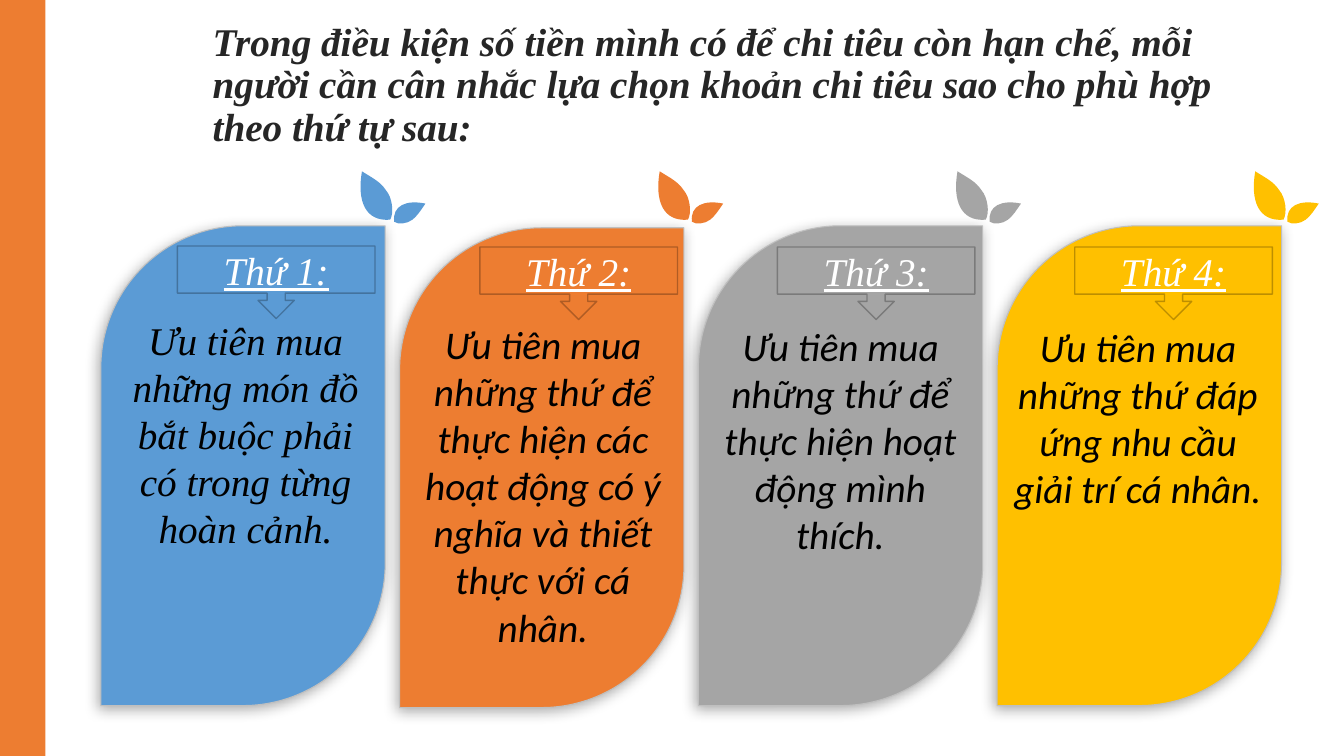
import lxml.etree
import pptx
import pptx.dml.color
import pptx.enum.shapes
import pptx.enum.text
import pptx.oxml
import pptx.oxml.ns
import pptx.util

Inches, Pt = pptx.util.Inches, pptx.util.Pt
RGBColor = pptx.dml.color.RGBColor
MSO_SHAPE = pptx.enum.shapes.MSO_SHAPE
MSO_ANCHOR = pptx.enum.text.MSO_ANCHOR
MSO_AUTO_SIZE = pptx.enum.text.MSO_AUTO_SIZE
PP_ALIGN = pptx.enum.text.PP_ALIGN
qn = pptx.oxml.ns.qn

BLUE = RGBColor(0x5B, 0x9B, 0xD5)
ORANGE = RGBColor(0xED, 0x7D, 0x31)
GRAY = RGBColor(0xA5, 0xA5, 0xA5)
GOLD = RGBColor(0xFF, 0xC0, 0x00)
BLUE_EDGE = RGBColor(0x43, 0x73, 0x9E)
ORANGE_EDGE = RGBColor(0xAF, 0x5C, 0x24)
GRAY_EDGE = RGBColor(0x7A, 0x7A, 0x7A)
GOLD_EDGE = RGBColor(0xBD, 0x8E, 0x00)
PANEL_EDGE = RGBColor(0xBF, 0xBF, 0xBF)
INK = RGBColor(0x26, 0x26, 0x26)
BLACK = RGBColor(0, 0, 0)
WHITE = RGBColor(0xFF, 0xFF, 0xFF)

SERIF, SANS = "Times New Roman", "Calibri"

HEADING = ("Trong điều kiện số tiền mình có để chi tiêu còn hạn chế, mỗi người cần "
           "cân nhắc lựa chọn khoản chi tiêu sao cho phù hợp theo thứ tự sau:")

# fill, edge, panel top, label (left, top), advice (left, top, height), font, advice
PRIORITIES = [
    (BLUE, BLUE_EDGE, 2.24, (1.76, 2.44), (1.1, 3.09, 2.46), SERIF,
     "Ưu tiên mua những món đồ bắt buộc phải có trong từng hoàn cảnh."),
    (ORANGE, ORANGE_EDGE, 2.26, (4.76, 2.45), (4.05, 3.13, 3.4), SANS,
     "Ưu tiên mua những thứ để thực hiện các hoạt động có ý nghĩa và thiết thực "
     "với cá nhân."),
    (GRAY, GRAY_EDGE, 2.24, (7.71, 2.45), (7, 3.15, 2.46), SANS,
     "Ưu tiên mua những thứ để thực hiện hoạt động mình thích."),
    (GOLD, GOLD_EDGE, 2.24, (10.66, 2.45), (9.95, 3.16, 1.99), SANS,
     "Ưu tiên mua những thứ đáp ứng nhu cầu giải trí cá nhân."),
]
PANEL_LEFT, PANEL_STEP = 1, (9.89 - 1) / 3
LEAF_STEP = (12.45 - 3.59) / 3

# Each leaf: start point, then two controls and an end for every cubic curve
LEAVES = [
    [(3.87, 2.18),
     (3.91, 2.11), (3.89, 1.96), (3.83, 1.89),
     (3.77, 1.8), (3.7, 1.77), (3.59, 1.7),
     (3.54, 1.99), (3.62, 2.2), (3.87, 2.18)],
    [(3.91, 2.2),
     (3.95, 2.23), (4.04, 2.22), (4.09, 2.18),
     (4.15, 2.13), (4.17, 2.09), (4.22, 2.02),
     (4.03, 1.98), (3.89, 2.04), (3.91, 2.2)],
]


def bend(outline):
    """Turn every three straight segments of a freeform into one cubic curve."""
    segments = list(outline._element.iter(qn("a:lnTo")))
    for first in range(0, len(segments), 3):
        curve = lxml.etree.Element(qn("a:cubicBezTo"))
        segments[first].addprevious(curve)
        for segment in segments[first:first + 3]:
            curve.append(segment[0])
            segment.getparent().remove(segment)


def write(frame, text, font=SERIF, size=28, color=BLACK, bold=False, underline=False,
          align=PP_ALIGN.CENTER, anchor=MSO_ANCHOR.TOP, fit=MSO_AUTO_SIZE.NONE,
          line_spacing=None, space_before=None):
    frame.word_wrap = True
    frame.auto_size = fit
    frame.vertical_anchor = anchor
    paragraph = frame.paragraphs[0]
    paragraph.alignment = align
    paragraph.line_spacing = line_spacing
    if space_before is not None:
        paragraph.space_before = Pt(space_before)
    run = paragraph.add_run()
    run.text = text
    run.font.name = font
    run.font.size = Pt(size)
    run.font.bold = bold
    run.font.italic = True
    run.font.underline = underline
    run.font.color.rgb = color


class SpendingSlide:
    def __init__(self, deck):
        self.slide = deck.slides.add_slide(deck.slide_layouts[5])
        self.shapes = self.slide.shapes

    def paint(self, shape, fill, edge=None, width=1):
        shape.shadow.inherit = False
        shape.fill.solid()
        shape.fill.fore_color.rgb = fill
        if edge is None:
            shape.line.fill.background()
        else:
            shape.line.color.rgb = edge
            shape.line.width = Pt(width)
        return shape

    def block(self, kind, left, top, width, height, fill, edge=None, line_width=1):
        shape = self.shapes.add_shape(kind, Inches(left), Inches(top),
                                      Inches(width), Inches(height))
        return self.paint(shape, fill, edge, line_width)

    def title(self, text):
        heading = self.shapes.title
        heading.left, heading.top = Inches(2.01), Inches(0.3)
        heading.width, heading.height = Inches(10.75), Inches(1.11)
        write(heading.text_frame, text, color=INK, bold=True, align=PP_ALIGN.LEFT,
              anchor=MSO_ANCHOR.MIDDLE, line_spacing=0.9, space_before=10)

    def panel(self, left, top, fill):
        panel = self.block(MSO_SHAPE.ROUND_2_DIAG_RECTANGLE, left, top, 2.82, 4.76,
                           fill, PANEL_EDGE, 0.75)
        panel.adjustments[0] = 0.5
        panel.adjustments[1] = 0
        effects = panel._element.spPr.find(qn("a:effectLst"))
        shadow = lxml.etree.SubElement(
            effects, qn("a:outerShdw"), blurRad=str(Pt(10)), dist=str(Pt(3)),
            dir=str(135 * 60000), algn="tr", rotWithShape="0")
        color = lxml.etree.SubElement(shadow, qn("a:srgbClr"), val="000000")
        lxml.etree.SubElement(color, qn("a:alpha"), val="33000")

    def sprout(self, shift, fill):
        """A grouped pair of leaves above a panel's right corner."""
        pair = self.shapes.add_group_shape()
        for leaf in LEAVES:
            start, *bends = [(Inches(x + shift), Inches(y)) for x, y in leaf]
            builder = pair.shapes.build_freeform(*start)
            builder.add_line_segments(bends, close=True)
            outline = builder.convert_to_shape()
            bend(outline)
            self.paint(outline, fill)

    def advice(self, left, top, height, text, font):
        box = self.shapes.add_textbox(Inches(left), Inches(top),
                                      Inches(2.67), Inches(height))
        write(box.text_frame, text, font=font, fit=MSO_AUTO_SIZE.SHAPE_TO_FIT_TEXT)

    def label(self, left, top, text, fill, edge):
        callout = self.block(MSO_SHAPE.DOWN_ARROW_CALLOUT, left, top, 1.96, 0.72,
                             fill, edge)
        write(callout.text_frame, text, color=WHITE, underline=True,
              anchor=MSO_ANCHOR.MIDDLE)


def main():
    deck = pptx.Presentation()
    deck.slide_width, deck.slide_height = Inches(13.33), Inches(7.5)
    page = SpendingSlide(deck)
    page.block(MSO_SHAPE.RECTANGLE, 0, 0, 0.45, 7.5, ORANGE)
    page.title(HEADING)
    for index, (fill, edge, top, label, advice, font, text) in enumerate(PRIORITIES):
        page.panel(PANEL_LEFT + index * PANEL_STEP, top, fill)
        page.sprout(index * LEAF_STEP, fill)
        page.advice(*advice, text, font)
        page.label(*label, f"Thứ {index + 1}:", fill, edge)
    deck.save("out.pptx")


if __name__ == "__main__":
    main()
